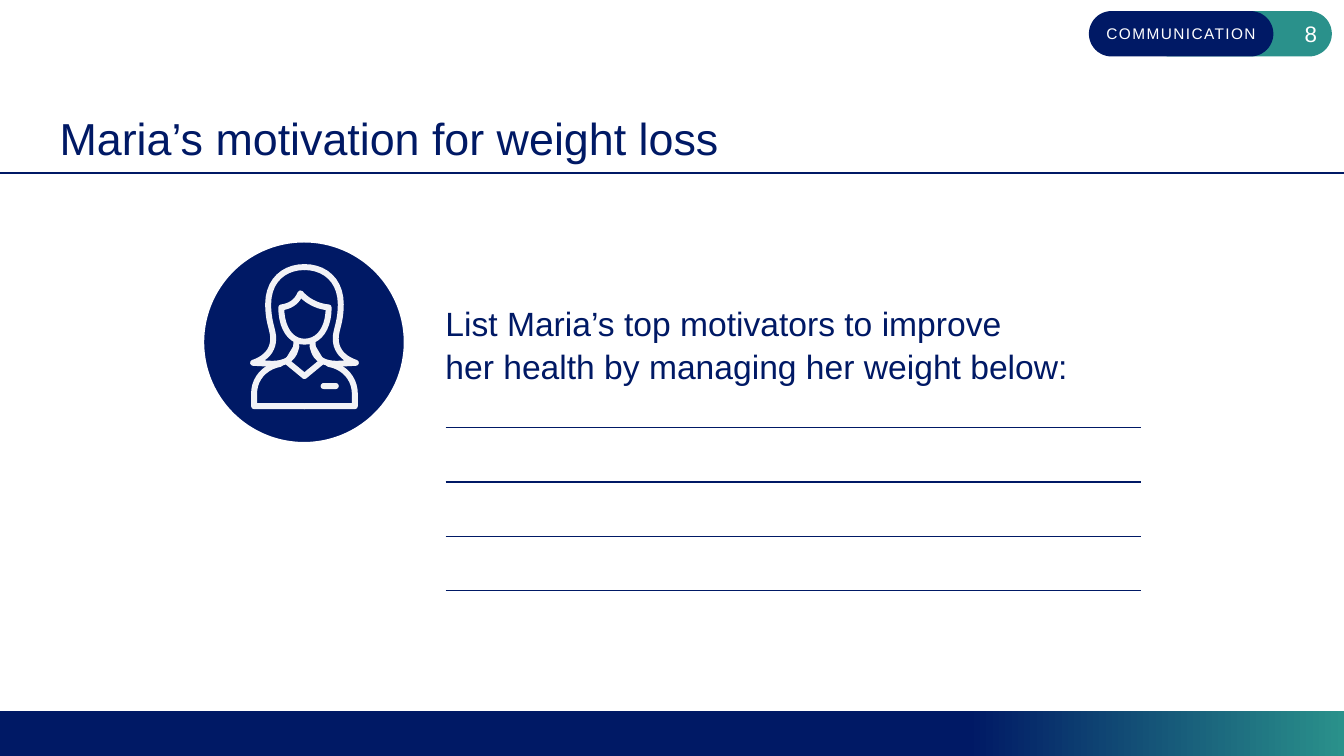
from lxml.etree import SubElement
from pptx import Presentation
from pptx.dml.color import RGBColor
from pptx.enum.shapes import MSO_CONNECTOR, MSO_SHAPE
from pptx.enum.text import MSO_ANCHOR, PP_ALIGN
from pptx.oxml.ns import qn
from pptx.util import Inches, Pt

NAVY, TEAL, WHITE, PALE = "001965", "2A918B", "FFFFFF", "F2F2F6"
color = RGBColor.from_string


def add_text(para, text, size, hex_color):
    span = para.add_run()
    span.text = text
    span.font.name = "Arial"
    span.font.size = Pt(size)
    span.font.color.rgb = color(hex_color)
    return span


def curve_points(start, curves, steps=10):
    """Sample a chain of cubic curves, each given as two controls and an end."""
    points = [start]
    for first, second, end in curves:
        begin = points[-1]
        for step in range(1, steps + 1):
            t = step / steps
            weights = ((1 - t) ** 3, 3 * t * (1 - t) ** 2, 3 * t * t * (1 - t), t ** 3)
            corners = (begin, first, second, end)
            points.append(tuple(sum(w * corner[axis] for w, corner in zip(weights, corners))
                                for axis in (0, 1)))
    return points


deck = Presentation()
deck.slide_width, deck.slide_height = Inches(13.33), Inches(7.5)
page = deck.slides.add_slide(deck.slide_layouts[6])
shapes = page.shapes

# Footer band
footer = shapes.add_shape(MSO_SHAPE.RECTANGLE, 0, Inches(7.05), Inches(13.33), Inches(0.45))
footer.shadow.inherit = False
footer.line.fill.background()
footer.fill.gradient()
footer.fill.gradient_angle = 0
for stop, position, shade in zip(footer.fill.gradient_stops, (0.72, 1), (NAVY, TEAL)):
    stop.position = position
    stop.color.rgb = color(shade)

# Title rule and writing lines
rules = [(0, 13.33, 1.72, 1.5)] + [(4.42, 11.32, 4.24 + 0.54 * row, 1) for row in range(4)]
for left, right, top, width in rules:
    rule = shapes.add_connector(MSO_CONNECTOR.STRAIGHT, Inches(left), Inches(top),
                                Inches(right), Inches(top))
    rule.line.color.rgb = color(NAVY)
    rule.line.width = Pt(width)
    SubElement(rule._element.spPr, qn("a:effectLst"))

# Page number and section pills
pills = [(11.38, TEAL, "8", 16, PP_ALIGN.RIGHT, 0),
         (10.8, NAVY, "COMMUNICATION", 11, PP_ALIGN.CENTER, 100)]
for left, shade, label, size, align, spacing in pills:
    pill = shapes.add_shape(MSO_SHAPE.ROUNDED_RECTANGLE, Inches(left), Inches(0.11),
                            Inches(1.83), Inches(0.45))
    pill.adjustments[0] = 0.5
    pill.shadow.inherit = False
    pill.fill.solid()
    pill.fill.fore_color.rgb = color(shade)
    pill.line.fill.background()
    frame = pill.text_frame
    frame.vertical_anchor = MSO_ANCHOR.MIDDLE
    frame.margin_left = frame.margin_right = Inches(0.08)
    frame.margin_top = frame.margin_bottom = Inches(0.04)
    para = frame.paragraphs[0]
    para.alignment = align
    span = add_text(para, label, size, WHITE)
    if spacing:
        span.font._element.set("spc", str(spacing))

# Title
title = shapes.add_textbox(Inches(0.59), Inches(0.45), Inches(11.92), Inches(1.18))
frame = title.text_frame
frame.word_wrap = True
frame.vertical_anchor = MSO_ANCHOR.BOTTOM
frame.margin_left = frame.margin_right = frame.margin_top = frame.margin_bottom = 0
add_text(frame.paragraphs[0], "Maria’s motivation for weight loss", 32, NAVY)

# Prompt
prompt = shapes.add_textbox(Inches(4.32), Inches(2.93), Inches(6.88), Inches(0.93))
prompt.text_frame.word_wrap = True
para = prompt.text_frame.paragraphs[0]
para.line_spacing = 1.07
para.space_after = Pt(8)
add_text(para, "List Maria’s top motivators to improve", 24, NAVY)
para.add_line_break()
add_text(para, "her health by managing her weight below:", 24, NAVY)

# Woman icon: strokes are measured sideways from its centre line
disc = shapes.add_shape(MSO_SHAPE.OVAL, Inches(2.01), Inches(2.39), Inches(2.01), Inches(2.01))
disc.shadow.inherit = False
disc.fill.solid()
disc.fill.fore_color.rgb = color(NAVY)
disc.line.color.rgb = color(WHITE)
disc.line.width = Pt(2.25)

CENTRE = 3.02
hair = curve_points((0, 2.65), [((0.2, 2.65), (0.36, 2.78), (0.36, 3.02)),
                                ((0.36, 3.2), (0.31, 3.27), (0.31, 3.36)),
                                ((0.31, 3.48), (0.39, 3.56), (0.51, 3.6))])
neck = curve_points((0.32, 3.61), [((0.16, 3.61), (0.08, 3.53), (0.08, 3.4))])
collar = [(0, 3.73), (0.17, 3.59), (0.08, 3.44)]
shoulder = curve_points((0.24, 3.61), [((0.4, 3.64), (0.5, 3.76), (0.5, 3.91))])
face = curve_points((-0.23, 3.05), [((-0.16, 3.04), (-0.08, 3.01), (-0.04, 2.91)),
                                    ((0.02, 2.98), (0.12, 3.04), (0.24, 3.05)),
                                    ((0.24, 3.25), (0.15, 3.39), (0, 3.39)),
                                    ((-0.14, 3.39), (-0.23, 3.25), (-0.23, 3.05))])
halves = [hair + neck, collar, shoulder + [(0.5, 4.03), (0, 4.03)]]
strokes = [(half, side) for half in halves for side in (1, -1)] + [(face, 1)]
for points, side in strokes:
    corners = [(Inches(CENTRE + side * x), Inches(y)) for x, y in points]
    builder = shapes.build_freeform(*corners[0])
    builder.add_line_segments(corners[1:], close=False)
    stroke = builder.convert_to_shape()
    stroke.shadow.inherit = False
    stroke.fill.background()
    stroke.line.color.rgb = color(PALE)
    stroke.line.width = Pt(4.25)
    outline = stroke.line._get_or_add_ln()
    outline.set("cap", "rnd")
    SubElement(outline, qn("a:round"))

badge = shapes.add_shape(MSO_SHAPE.ROUNDED_RECTANGLE, Inches(3.18), Inches(3.8),
                         Inches(0.18), Inches(0.06))
badge.adjustments[0] = 0.5
badge.shadow.inherit = False
badge.fill.solid()
badge.fill.fore_color.rgb = color(PALE)
badge.line.fill.background()

deck.save("out.pptx")
